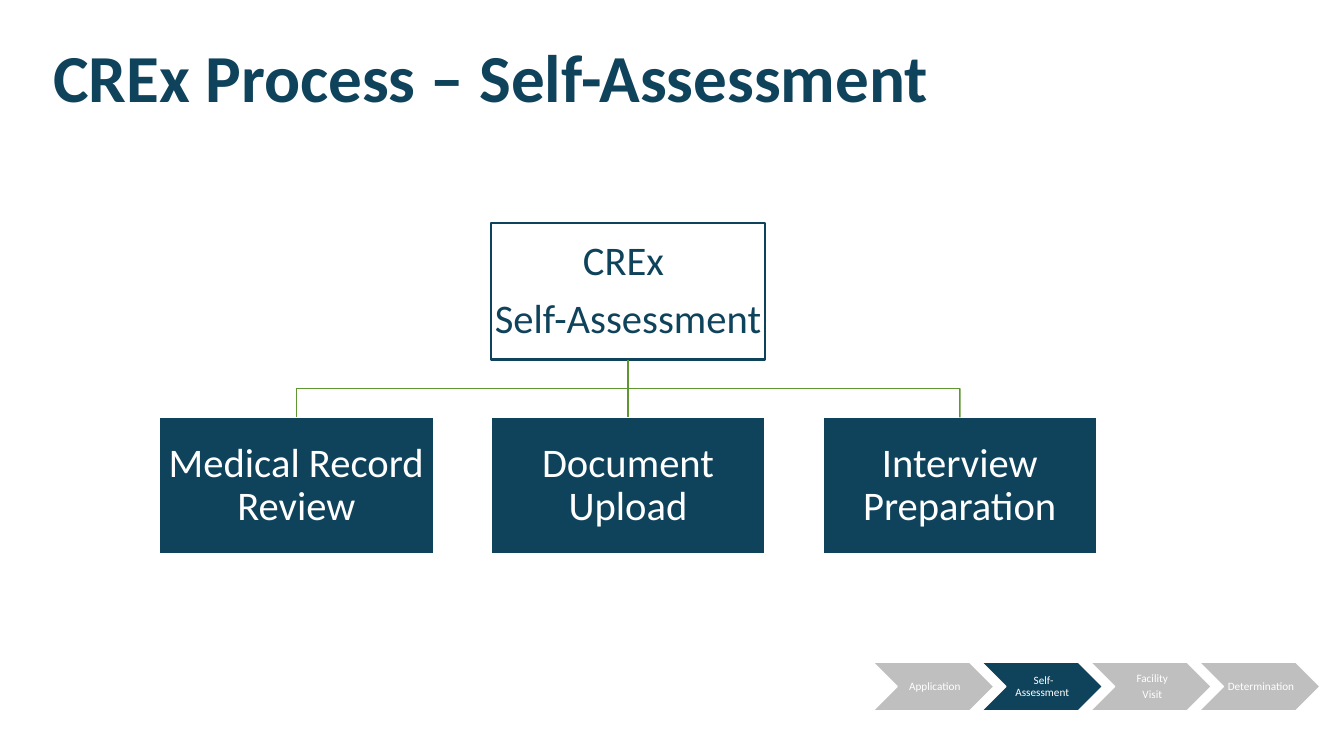
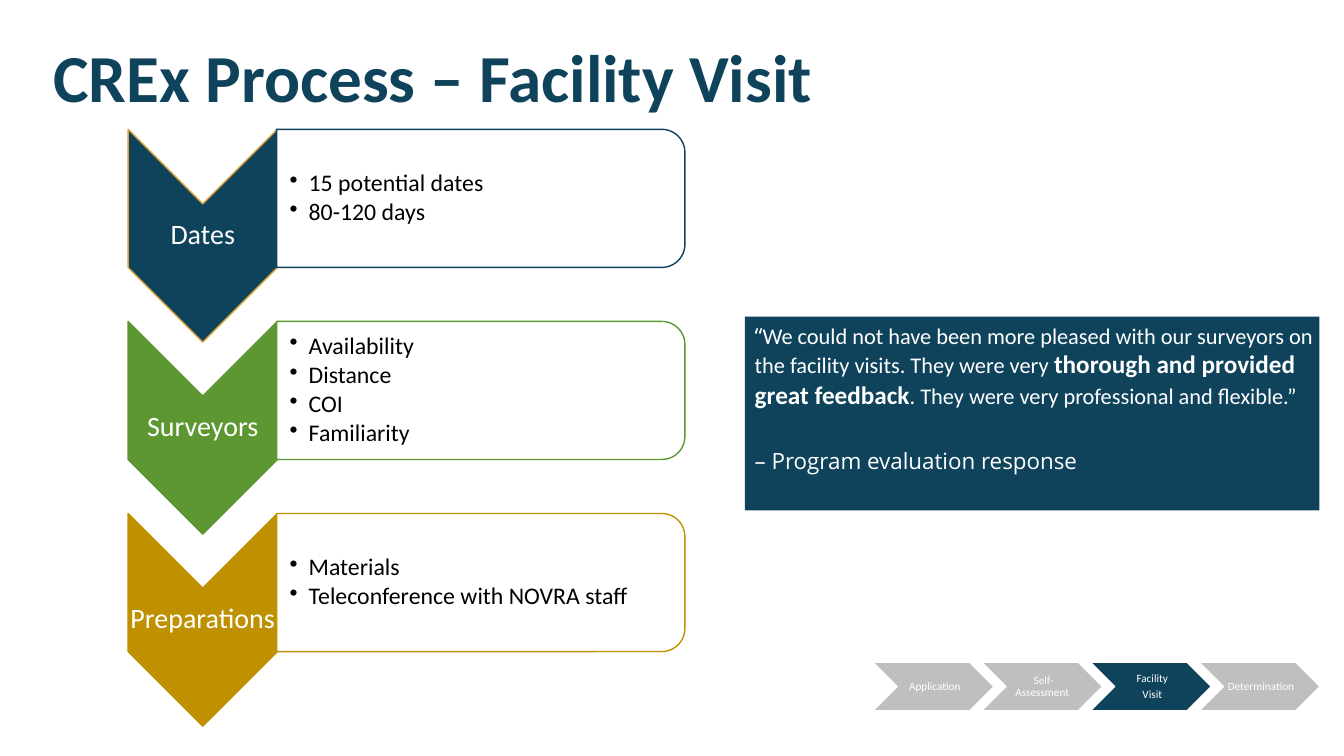
from lxml import etree
from pptx import Presentation
from pptx import util as u
from pptx.dml.color import RGBColor
from pptx.enum import shapes, text
from pptx.oxml.ns import qn

NAVY, GREEN, GOLD, ORANGE = "0F435B", "5D9731", "BF9000", "D9A13A"
GREY, WHITE, BLACK, BRANCH = "BFBFBF", "FFFFFF", "000000", "5E9732"
CENTER, LEFT = text.PP_ALIGN.CENTER, text.PP_ALIGN.LEFT
KIND = shapes.MSO_SHAPE

STAGES = [["Application"], ["Self-Assessment "], ["Facility", "Visit"], ["Determination"]]
ROOT = ["CREx ", "Self-Assessment"]
BRANCHES = ["Medical Record Review", "Document Upload", "Interview Preparation"]
VISIT_PARTS = [
    ("Dates", NAVY, ORANGE, ["15 potential dates", "80-120 days"]),
    ("Surveyors", GREEN, GREEN, ["Availability", "Distance", "COI", "Familiarity"]),
    ("Preparations", GOLD, GOLD, ["Materials", "Teleconference with NOVRA staff"]),
]
QUOTE = [
    [("“", {"name": "Open Sans"}),
     ("We could not have been more pleased with our surveyors on the facility visits. "
      "They were very ", {}),
     ("thorough and provided great feedback", {"size": u.Pt(18), "bold": True}),
     (". They were very professional and flexible.”", {})],
    [("– Program evaluation response", {"name": "Open Sans"})],
]


def color(value):
    return RGBColor.from_string(value)


def assign(target, values):
    for name, value in values.items():
        setattr(target, name, value)


def add_span(para, words, size, tint, extra=None):
    span = para.add_run()
    span.text = words
    assign(span.font, {"name": "Calibri", "size": u.Pt(size), **(extra or {})})
    span.font.color.rgb = color(tint)


def set_frame(box, inset, left_inset=None, anchor=text.MSO_ANCHOR.MIDDLE):
    edge = u.Cm(inset)
    assign(box.text_frame, {
        "word_wrap": True, "vertical_anchor": anchor,
        "margin_left": edge if left_inset is None else u.Cm(left_inset),
        "margin_right": edge, "margin_top": edge, "margin_bottom": edge})
    return box.text_frame


def next_para(frame, index):
    return frame.add_paragraph() if index else frame.paragraphs[0]


def write(box, lines, size, tint, inset=0.03, left_inset=None, bullets=False):
    frame = set_frame(box, inset, left_inset)
    for index, words in enumerate(lines):
        para = next_para(frame, index)
        if bullets:
            props = para._p.get_or_add_pPr()
            props.set("marL", str(u.Cm(0.48)))
            props.set("indent", str(-u.Cm(0.48)))
            etree.SubElement(props, qn("a:buChar")).set("char", "•")
        assign(para, {"alignment": LEFT if bullets else CENTER, "line_spacing": 0.9,
                      "space_after": u.Pt(round(size * (0.15 if bullets else 0.35), 1))})
        add_span(para, words, size, tint)


def add_box(page, kind, left, top, width, height, fill, line=None, weight=1):
    box = page.shapes.add_shape(kind, *map(u.Cm, (left, top, width, height)))
    box.shadow.inherit = False
    box.fill.solid()
    box.fill.fore_color.rgb = color(fill)
    if line:
        box.line.color.rgb = color(line)
        box.line.width = u.Pt(weight)
    else:
        box.line.fill.background()
    return box


def add_turned(page, kind, left, top, width, height, fill, line):
    shift = (width - height) / 2
    box = add_box(page, kind, left + shift, top - shift, height, width, fill, line)
    box.rotation = 90
    return box


def add_label(page, left, top, width, height):
    return page.shapes.add_textbox(*map(u.Cm, (left, top, width, height)))


def add_line(page, start, end, begin_box=None, end_box=None):
    line = page.shapes.add_connector(
        shapes.MSO_CONNECTOR.STRAIGHT, *map(u.Cm, (*start, *end)))
    line.line.color.rgb = color(BRANCH)
    line.line.width = u.Pt(1)
    etree.SubElement(line._element.spPr, qn("a:effectLst"))
    if begin_box:
        line.begin_connect(begin_box, 2)
    if end_box:
        line.end_connect(end_box, 0)


def add_page(deck, title, active):
    page = deck.slides.add_slide(deck.slide_layouts[5])
    heading = page.shapes.title
    assign(heading, {"left": u.Cm(1.09), "top": u.Cm(0.74),
                     "width": u.Cm(23.27), "height": u.Cm(2.31)})
    heading.text_frame.auto_size = text.MSO_AUTO_SIZE.NONE
    para = heading.text_frame.paragraphs[0]
    para.alignment = LEFT
    add_span(para, title, 48, NAVY, {"bold": True})
    for index, lines in enumerate(STAGES):
        stage = add_box(page, KIND.CHEVRON, 22 + index * 2.74, 16.69, 3.05, 1.22,
                        NAVY if index == active else GREY, WHITE)
        write(stage, lines, 8, WHITE, left_inset=0.1)
    return page


def build_assessment(deck):
    page = add_page(deck, "CREx Process – Self-Assessment", 1)
    width, height, left, pitch = 6.92, 3.45, 4.01, 8.36
    root_top, branch_top = 5.61, 10.52
    bus = (root_top + height + branch_top) / 2
    root = add_box(page, KIND.RECTANGLE, left + pitch, root_top, width, height,
                   WHITE, NAVY, 1.5)
    write(root, ROOT, 29, NAVY, 0.05)
    centers = []
    for index, words in enumerate(BRANCHES):
        x = left + index * pitch
        center = x + width / 2
        centers.append(center)
        box = add_box(page, KIND.RECTANGLE, x, branch_top, width, height, NAVY, WHITE, 1.5)
        write(box, [words], 29, WHITE, 0.05)
        middle = index == 1
        add_line(page, (center, root_top + height if middle else bus),
                 (center, branch_top), root if middle else None, box)
    add_line(page, (centers[0], bus), (centers[-1], bus))


def build_visit(deck):
    page = add_page(deck, "CREx Process – Facility Visit", 2)
    left, width, height = 3.23, 3.76, 5.36
    panel_left, panel_width, panel_height = 6.97, 10.29, 3.48
    for index, (name, fill, line, items) in enumerate(VISIT_PARTS):
        top = 3.26 + index * 4.84
        add_turned(page, KIND.CHEVRON, left, top, width, height, fill, line)
        write(add_label(page, left, top + width / 2, width, height - width),
              [name], 20, WHITE)
        add_turned(page, KIND.ROUND_2_SAME_RECTANGLE, panel_left, top,
                   panel_width, panel_height, WHITE, fill)
        write(add_label(page, panel_left, top + 0.17, panel_width - 0.17, panel_height - 0.34),
              items, 17, BLACK, left_inset=0.33, bullets=True)
    box = add_box(page, KIND.RECTANGLE, 18.77, 7.98, 14.48, 4.88, NAVY)
    frame = set_frame(box, 0.13, 0.25, text.MSO_ANCHOR.TOP)
    for index, spans in enumerate(QUOTE):
        para = next_para(frame, index)
        para.alignment = LEFT
        if index:
            para.space_before = u.Pt(27)
        for words, extra in spans:
            add_span(para, words, 16, WHITE, extra)


def main():
    deck = Presentation()
    assign(deck, {"slide_width": u.Cm(33.87), "slide_height": u.Cm(19.05)})
    build_assessment(deck)
    build_visit(deck)
    deck.save("out.pptx")


if __name__ == "__main__":
    main()
